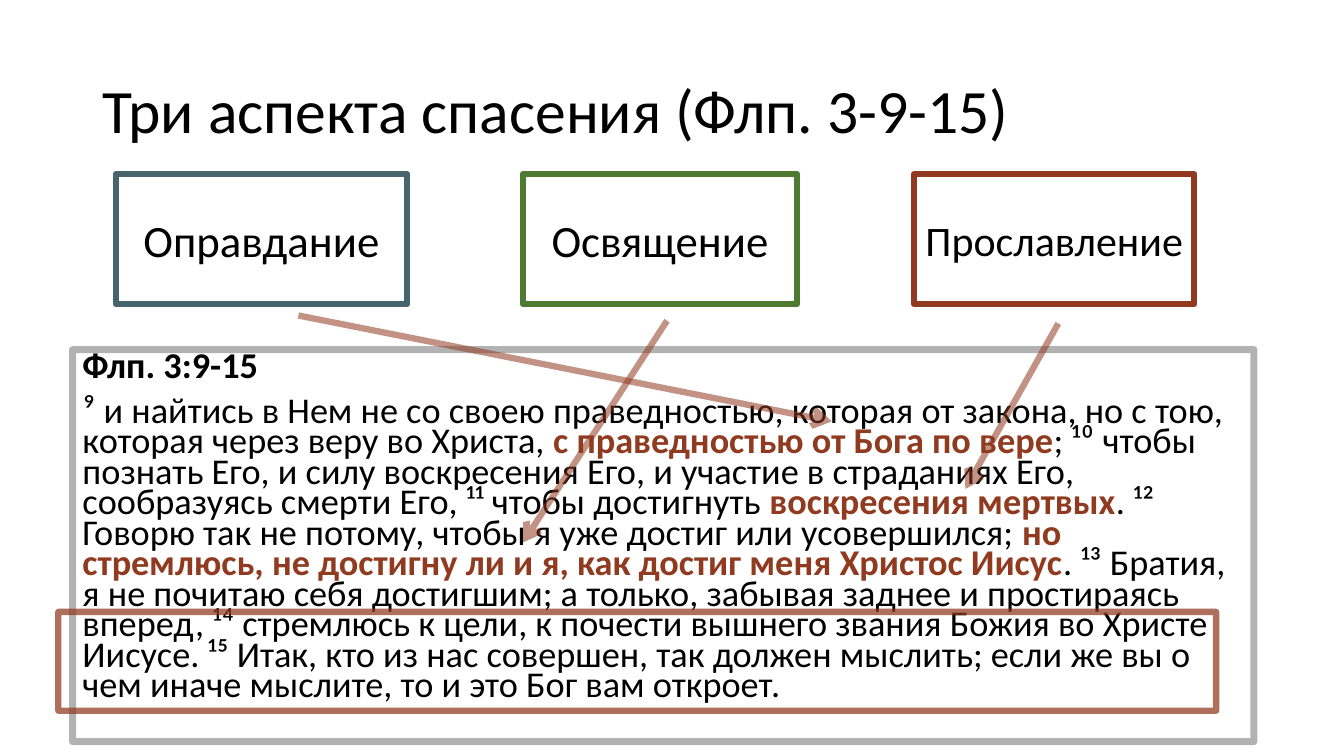
from dataclasses import dataclass

from lxml import etree
from pptx import Presentation
from pptx.dml.color import RGBColor
from pptx.enum.shapes import MSO_CONNECTOR, MSO_SHAPE
from pptx.enum.text import MSO_ANCHOR, MSO_AUTO_SIZE, PP_ALIGN
from pptx.oxml.ns import qn
from pptx.shapes.autoshape import Shape
from pptx.slide import Slide
from pptx.text.text import _Paragraph as Paragraph
from pptx.util import Cm, Pt

RECTANGLE = MSO_SHAPE.RECTANGLE
STRAIGHT = MSO_CONNECTOR.STRAIGHT
MIDDLE, TOP = MSO_ANCHOR.MIDDLE, MSO_ANCHOR.TOP
LEFT, CENTER = PP_ALIGN.LEFT, PP_ALIGN.CENTER
NO_AUTOFIT = MSO_AUTO_SIZE.NONE
TITLE_ONLY = 5


@dataclass(frozen=True)
class Theme:
    font: str = "Calibri"
    text: str = "000000"
    paper: str = "FFFFFF"
    rust: str = "903B20"
    green: str = "4F7A32"
    teal: str = "45646B"
    grey: str = "808080"
    title_size: float = 44
    aspect_size: float = 32
    long_aspect_size: float = 30
    verse_size: float = 25.9
    line_width: float = 4.5
    passage_line_width: float = 5


THEME = Theme()


@dataclass(frozen=True)
class Box:
    left: float
    top: float
    width: float
    height: float


@dataclass(frozen=True)
class Aspect:
    """One aspect of salvation, with the arrow to its words in the passage."""
    name: str
    left: float
    width: float
    color: str
    size: float
    arrow_from: tuple[float, float]
    arrow_to: tuple[float, float]


@dataclass(frozen=True)
class Phrase:
    text: str
    color: str = THEME.text
    bold: bool = False


def key_phrase(text: str) -> Phrase:
    return Phrase(text, THEME.rust, True)


TITLE = "Три аспекта спасения (Флп. 3-9-15)"
TITLE_BOX = Box(2.34, 1.02, 29.21, 3.68)
PASSAGE_BOX = Box(1.83, 8.81, 29.77, 9.88)
CLOSING_VERSES_BOX = Box(1.47, 15.42, 29.18, 2.49)
ASPECT_TOP, ASPECT_HEIGHT = 4.39, 3.28
PASSAGE_OPACITY, ARROW_OPACITY, CLOSING_OPACITY = 60, 55, 73

ASPECTS = [
    Aspect("Оправдание", 2.92, 7.34, THEME.teal, THEME.aspect_size,
           (7.52, 7.95), (20.96, 10.62)),
    Aspect("Освящение", 13.18, 6.91, THEME.green, THEME.aspect_size,
           (16.81, 8.08), (13.18, 13.67)),
    Aspect("Прославление", 23.04, 7.06, THEME.rust, THEME.long_aspect_size,
           (26.67, 8.15), (24.33, 12.32)),
]

PASSAGE = [
    [Phrase("Флп. 3:9-15", bold=True)],
    [
        Phrase("⁹ и найтись в Нем не со своею праведностью, которая от закона, "
               "но с тою, которая через веру во Христа, "),
        key_phrase("с праведностью от Бога по вере"),
        Phrase("; ¹⁰ чтобы познать Его, и силу воскресения Его, и участие "
               "в страданиях Его, сообразуясь смерти Его, ¹¹ чтобы достигнуть "),
        key_phrase("воскресения мертвых"),
        Phrase(". ¹² Говорю так не потому, чтобы я уже достиг или усовершился; "),
        key_phrase("но стремлюсь, не достигну ли и я, как достиг меня Христос Иисус"),
        Phrase(". ¹³ Братия, я не почитаю себя достигшим; а только, забывая "
               "заднее и простираясь вперед, ¹⁴ стремлюсь к цели, к почести "
               "вышнего звания Божия во Христе Иисусе. ¹⁵ Итак, кто из нас "
               "совершен, так должен мыслить; если же вы о чем иначе мыслите, "
               "то и это Бог вам откроет."),
    ],
]


def add_phrase(paragraph: Paragraph, phrase: Phrase, size: float) -> None:
    run = paragraph.add_run()
    run.text = phrase.text
    run.font.name = THEME.font
    run.font.size = Pt(size)
    run.font.bold = phrase.bold
    run.font.color.rgb = RGBColor.from_string(phrase.color)


def set_opacity(shape_properties: etree._Element, percent: int) -> None:
    """Make the outline colour translucent."""
    color = shape_properties.find(f"{qn('a:ln')}/{qn('a:solidFill')}/{qn('a:srgbClr')}")
    etree.SubElement(color, qn("a:alpha"), val=str(percent * 1000))


def add_frame(slide: Slide, box: Box, color: str, width: float) -> Shape:
    """Add an unfilled rectangle with a coloured outline."""
    frame = slide.shapes.add_shape(
        RECTANGLE, Cm(box.left), Cm(box.top), Cm(box.width), Cm(box.height))
    frame.shadow.inherit = False
    frame.fill.background()
    frame.line.color.rgb = RGBColor.from_string(color)
    frame.line.width = Pt(width)
    return frame


def add_title(slide: Slide) -> None:
    title = slide.shapes.title
    title.left, title.top = Cm(TITLE_BOX.left), Cm(TITLE_BOX.top)
    title.width, title.height = Cm(TITLE_BOX.width), Cm(TITLE_BOX.height)
    title.text_frame.auto_size = NO_AUTOFIT
    title.text_frame.vertical_anchor = MIDDLE
    paragraph = title.text_frame.paragraphs[0]
    paragraph.alignment = LEFT
    paragraph.line_spacing = 0.9
    add_phrase(paragraph, Phrase(TITLE), THEME.title_size)


def add_passage(slide: Slide) -> None:
    frame = add_frame(slide, PASSAGE_BOX, THEME.grey, THEME.passage_line_width)
    set_opacity(frame._element.spPr, PASSAGE_OPACITY)
    text = frame.text_frame
    text.word_wrap = True
    text.vertical_anchor = TOP
    for index, phrases in enumerate(PASSAGE):
        paragraph = text.add_paragraph() if index else text.paragraphs[0]
        paragraph.alignment = LEFT
        paragraph.line_spacing = 0.7
        paragraph.space_before = Pt(10)
        for phrase in phrases:
            add_phrase(paragraph, phrase, THEME.verse_size)


def add_aspect(slide: Slide, aspect: Aspect) -> None:
    box = Box(aspect.left, ASPECT_TOP, aspect.width, ASPECT_HEIGHT)
    frame = add_frame(slide, box, aspect.color, THEME.line_width)
    frame.fill.solid()
    frame.fill.fore_color.rgb = RGBColor.from_string(THEME.paper)
    frame.text_frame.word_wrap = True
    frame.text_frame.vertical_anchor = MIDDLE
    paragraph = frame.text_frame.paragraphs[0]
    paragraph.alignment = CENTER
    add_phrase(paragraph, Phrase(aspect.name), aspect.size)


def add_arrow(slide: Slide, aspect: Aspect) -> None:
    start, end = aspect.arrow_from, aspect.arrow_to
    arrow = slide.shapes.add_connector(STRAIGHT, *map(Cm, start), *map(Cm, end))
    arrow.line.color.rgb = RGBColor.from_string(THEME.rust)
    arrow.line.width = Pt(THEME.line_width)
    properties = arrow._element.spPr
    set_opacity(properties, ARROW_OPACITY)
    etree.SubElement(properties.find(qn("a:ln")), qn("a:tailEnd"), type="arrow")
    etree.SubElement(properties, qn("a:effectLst"))


def main() -> None:
    presentation = Presentation()
    presentation.slide_width, presentation.slide_height = Cm(33.87), Cm(19.05)
    slide = presentation.slides.add_slide(presentation.slide_layouts[TITLE_ONLY])
    add_title(slide)
    add_passage(slide)
    for aspect in ASPECTS:
        add_aspect(slide, aspect)
    for aspect in ASPECTS:
        add_arrow(slide, aspect)
    closing = add_frame(slide, CLOSING_VERSES_BOX, THEME.rust, THEME.line_width)
    set_opacity(closing._element.spPr, CLOSING_OPACITY)
    presentation.save("out.pptx")


if __name__ == "__main__":
    main()
